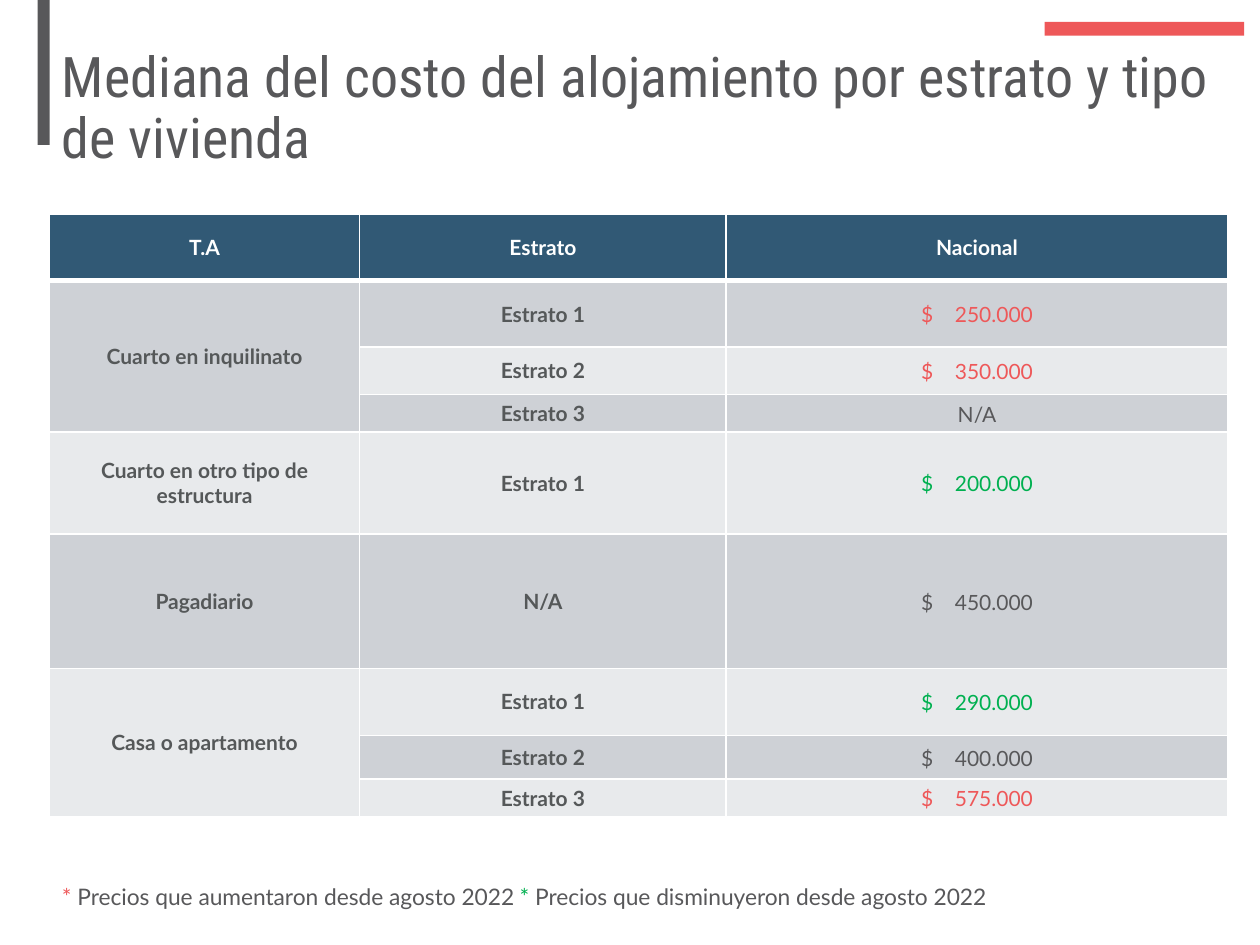
from lxml import etree
from pptx import Presentation
from pptx.dml.color import RGBColor
from pptx.enum.shapes import MSO_SHAPE
from pptx.enum.text import MSO_ANCHOR, PP_ALIGN
from pptx.oxml.ns import qn
from pptx.util import Cm, Pt

RECT = MSO_SHAPE.RECTANGLE
MIDDLE, TOP = MSO_ANCHOR.MIDDLE, MSO_ANCHOR.TOP
CENTER, LEFT = PP_ALIGN.CENTER, PP_ALIGN.LEFT

WHITE = RGBColor(0xFF, 0xFF, 0xFF)
RED = RGBColor(0xEE, 0x58, 0x59)
GREEN = RGBColor(0x00, 0xB0, 0x50)
GRAY = RGBColor(0x58, 0x58, 0x5A)
SLATE = RGBColor(0x55, 0x58, 0x59)
NAVY = RGBColor(0x31, 0x59, 0x75)
DARK = RGBColor(0xCE, 0xD1, 0xD6)
LIGHT = RGBColor(0xE8, 0xEA, 0xEC)

TITLE = {"name": "Roboto Condensed", "size": Pt(32)}
NOTE = {"name": "Lato", "size": Pt(13)}
PLAIN = {"name": "Lato", "size": Pt(12), "bold": False}
STRONG = {**PLAIN, "bold": True}
TIGHT = {"margin_left": Cm(0.03), "margin_right": Cm(0.03),
         "margin_top": Cm(0.03), "margin_bottom": Cm(0)}

HEADS = ["T.A", "Estrato", "Nacional"]
GROUPS = [
    ("Cuarto en inquilinato", [
        ("Estrato 1", "250.000", RED, 1.34),
        ("Estrato 2", "350.000", RED, 0.95),
        ("Estrato 3", "N/A", GRAY, 0.76)]),
    ("Cuarto en otro tipo de estructura", [
        ("Estrato 1", "200.000", GREEN, 2.05)]),
    ("Pagadiario", [
        ("N/A", "450.000", GRAY, 2.71)]),
    ("Casa o apartamento", [
        ("Estrato 1", "290.000", GREEN, 1.35),
        ("Estrato 2", "400.000", GRAY, 0.88),
        ("Estrato 3", "575.000", RED, 0.75)]),
]
WIDTHS = [6.25, 7.39, 10.11]
HEAD_HIGH = 1.34
PRICE_GAP = 9.3


def apply(item, values):
    for name, value in values.items():
        setattr(item, name, value)


class Deck:
    def __init__(self):
        self.show = Presentation()
        self.show.slide_width, self.show.slide_height = Cm(25.4), Cm(19.05)
        self.slide = self.show.slides.add_slide(self.show.slide_layouts[6])

    def bar(self, box, color):
        shape = self.slide.shapes.add_shape(RECT, *map(Cm, box))
        shape.shadow.inherit = False
        shape.fill.solid()
        shape.fill.fore_color.rgb = color
        shape.line.fill.background()

    def words(self, frame, parts, style, align=LEFT, space=None):
        para = frame.paragraphs[0]
        apply(para, {"alignment": align, "line_spacing": space})
        for text, color in parts:
            run = para.add_run()
            run.text = text
            apply(run.font, style)
            run.font.color.rgb = color
        return para

    def text(self, box, parts, style, anchor=TOP, space=None):
        frame = self.slide.shapes.add_textbox(*map(Cm, box)).text_frame
        apply(frame, {"word_wrap": True, "vertical_anchor": anchor})
        self.words(frame, parts, style, space=space)

    def edge(self, cell, sides):
        props = cell._tc.get_or_add_tcPr()
        for side, width in sides.items():
            line = etree.SubElement(props, qn(f"a:ln{side}"), w=str(Pt(width)))
            fill = etree.SubElement(line, qn("a:solidFill"))
            etree.SubElement(fill, qn("a:srgbClr"), val=str(WHITE))

    def cell(self, cell, parts, style, fill, sides):
        self.edge(cell, sides)
        cell.fill.solid()
        cell.fill.fore_color.rgb = fill
        cell.vertical_anchor = MIDDLE
        return self.words(cell.text_frame, parts, style, CENTER)

    def price(self, cell, value, color, fill, sides):
        apply(cell, TIGHT)
        parts = [(value, color)]
        if value != "N/A":
            parts = [("$", color), (" ", color), (value, color)]
        para = self.cell(cell, parts, PLAIN, fill, sides)
        if len(parts) > 1:
            gap = para.runs[1]._r.get_or_add_rPr()
            gap.set("spc", str(round(PRICE_GAP * 100)))

    def table(self, left, top):
        highs = [HEAD_HIGH] + [row[3] for _, rows in GROUPS for row in rows]
        size = Cm(sum(WIDTHS)), Cm(sum(highs))
        table = self.slide.shapes.add_table(
            len(highs), len(WIDTHS), Cm(left), Cm(top), *size).table
        apply(table, {"first_row": False, "horz_banding": False})
        for col, width in zip(table.columns, WIDTHS):
            col.width = Cm(width)
        for row, high in zip(table.rows, highs):
            row.height = Cm(high)
        for col, head in enumerate(HEADS):
            self.cell(table.cell(0, col), [(head, WHITE)], STRONG, NAVY,
                      {"L": 1, "R": 1, "T": 1, "B": 3})
        start = 1
        for kind, rows in GROUPS:
            for at, (level, value, color, _) in enumerate(rows, start):
                fill = DARK if at % 2 else LIGHT
                sides = {"L": 1, "R": 1, "T": 3 if at == 1 else 1, "B": 1}
                label = [(kind, SLATE)] if at == start else []
                self.cell(table.cell(at, 0), label, STRONG, fill, sides)
                self.cell(table.cell(at, 1), [(level, SLATE)], STRONG,
                          fill, sides)
                self.price(table.cell(at, 2), value, color, fill, sides)
            end = start + len(rows) - 1
            if end > start:
                table.cell(start, 0).merge(table.cell(end, 0))
            start = end + 1


def main():
    deck = Deck()
    deck.bar((21.06, 0.44, 4.02, 0.28), RED)
    deck.bar((0.76, 0, 0.24, 2.92), GRAY)
    deck.text((1, 1.37, 23.75, 1.7), [
        ("Mediana del costo del alojamiento por estrato y tipo de vivienda",
         GRAY)], TITLE, MIDDLE, 0.9)
    deck.table(1, 4.32)
    deck.text((1, 17.68, 21.97, 0.81), [
        ("* ", RED), ("Precios que aumentaron desde agosto 2022 ", GRAY),
        ("* ", GREEN), ("Precios que disminuyeron desde agosto 2022", GRAY),
    ], NOTE)
    deck.show.save("out.pptx")


if __name__ == "__main__":
    main()
